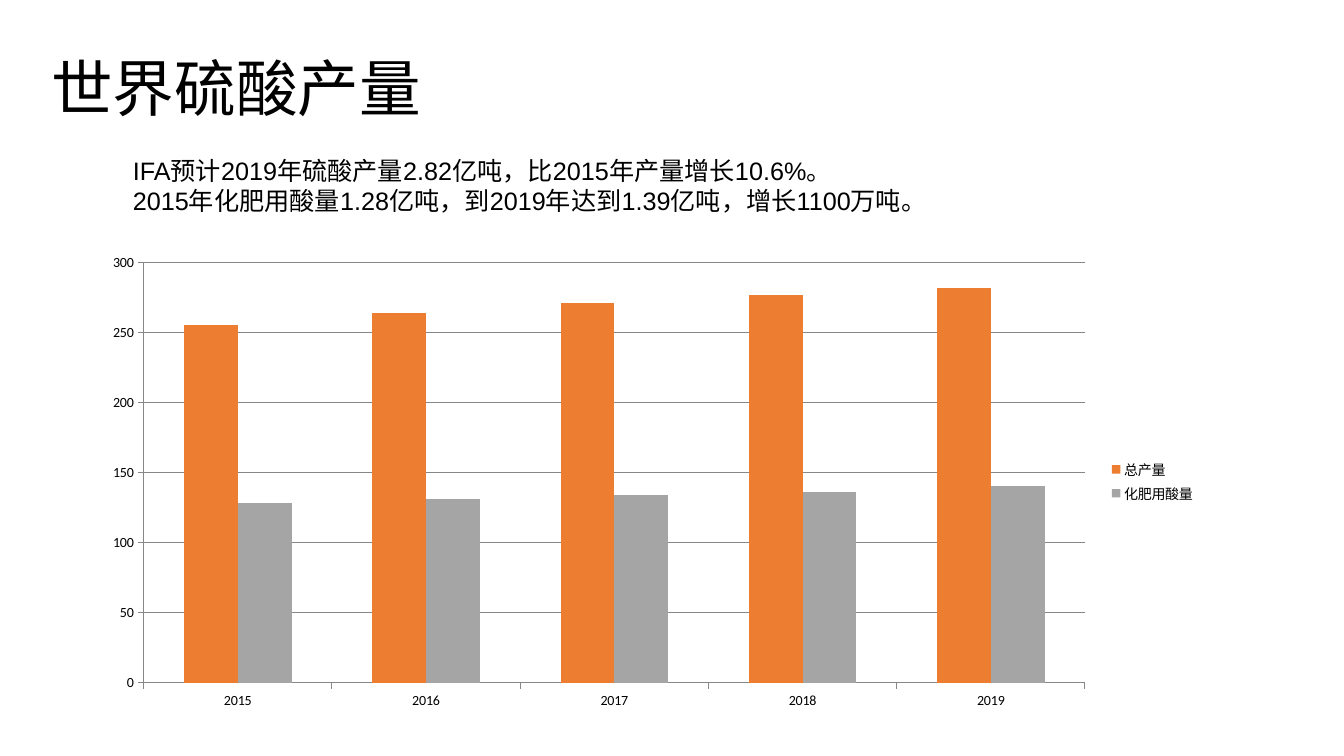
"""Build the slide on world sulfuric acid output."""
import pptx
import pptx.chart.data
import pptx.dml.color
import pptx.enum.chart
import pptx.enum.text
import pptx.util

Pt = pptx.util.Pt


def tint(code):
    """Turn a hex string into a colour."""
    return pptx.dml.color.RGBColor.from_string(code)


class Deck:
    """Hold the style and the current slide."""

    ink, rule = "000000", "878787"
    head, body = "Calibri", "Arial"

    def __init__(self, wide, high):
        """Start a deck with one titled slide."""
        self.prs = pptx.Presentation()
        self.prs.slide_width, self.prs.slide_height = Pt(wide), Pt(high)
        self.slide = self.prs.slides.add_slide(self.prs.slide_layouts[5])

    def style(self, font, name, size):
        """Set the face, size and ink of a font."""
        font.name, font.size = name, Pt(size)
        font.color.rgb = tint(self.ink)

    def title(self, text, box):
        """Fill and place the title."""
        shape = self.slide.shapes.title
        shape.left, shape.top, shape.width, shape.height = map(Pt, box)
        frame = shape.text_frame
        frame.text = text
        frame.vertical_anchor = pptx.enum.text.MSO_ANCHOR.MIDDLE
        para = frame.paragraphs[0]
        para.alignment = pptx.enum.text.PP_ALIGN.LEFT
        para.line_spacing = 0.9
        self.style(para.runs[0].font, self.head, 44)

    def text(self, lines, box):
        """Add a wrapped text box with one paragraph per line."""
        frame = self.slide.shapes.add_textbox(*map(Pt, box)).text_frame
        frame.word_wrap = True
        frame.auto_size = pptx.enum.text.MSO_AUTO_SIZE.SHAPE_TO_FIT_TEXT
        frame.text = "\n".join(lines)
        for para in frame.paragraphs:
            self.style(para.runs[0].font, self.body, 18)

    def chart(self, years, rows, box):
        """Add a clustered column chart with a legend on the right."""
        enum = pptx.enum.chart
        data = pptx.chart.data.CategoryChartData()
        data.categories = years
        for name, vals, _ in rows:
            data.add_series(name, vals)
        kind = enum.XL_CHART_TYPE.COLUMN_CLUSTERED
        chart = self.slide.shapes.add_chart(kind, *map(Pt, box), data).chart
        self.style(chart.font, self.head, 10)
        chart.has_title = False
        chart.has_legend = True
        chart.legend.position = enum.XL_LEGEND_POSITION.RIGHT
        chart.legend.include_in_layout = False
        plot = chart.plots[0]
        plot.vary_by_categories = False
        plot.gap_width, plot.overlap = 150, 0
        for bars, (_, _, code) in zip(plot.series, rows):
            bars.format.fill.solid()
            bars.format.fill.fore_color.rgb = tint(code)
        axis = chart.value_axis
        axis.minimum_scale, axis.maximum_scale = 0, 300
        axis.major_unit = 50
        axis.has_major_gridlines = True
        for part in (axis, chart.category_axis):
            part.major_tick_mark = enum.XL_TICK_MARK.OUTSIDE
        for part in (axis, chart.category_axis, axis.major_gridlines):
            part.format.line.color.rgb = tint(self.rule)
            part.format.line.width = Pt(0.75)


def main():
    """Build and save the slide."""
    deck = Deck(960, 540)
    deck.title("世界硫酸产量", (29.5, 13, 828, 104.4))
    deck.chart(
        ["2015", "2016", "2017", "2018", "2019"],
        [
            ("总产量", (255, 264, 271, 277, 282), "ED7D31"),
            ("化肥用酸量", (128, 131, 134, 136, 140), "A5A5A5"),
        ],
        (64.8, 175, 796.3, 337.7),
    )
    deck.text(
        [
            "IFA预计2019年硫酸产量2.82亿吨，比2015年产量增长10.6%。",
            "2015年化肥用酸量1.28亿吨，到2019年达到1.39亿吨，增长1100万吨。",
        ],
        (87.8, 107.3, 645, 51),
    )
    deck.prs.save("out.pptx")


if __name__ == "__main__":
    main()
